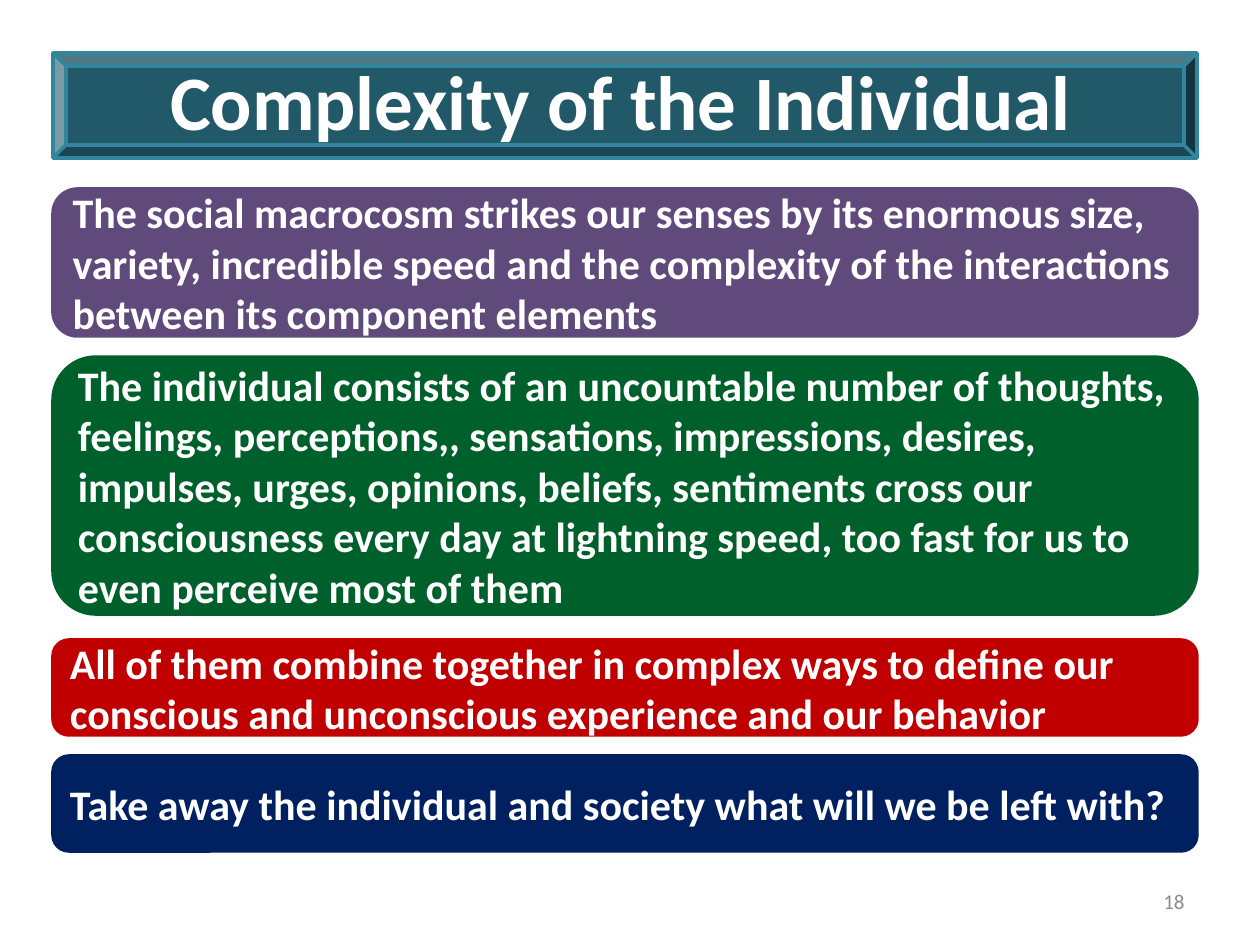
from pptx import Presentation
from pptx.dml.color import RGBColor
from pptx.enum.shapes import MSO_SHAPE as Shape
from pptx.enum.text import MSO_ANCHOR as Anchor, MSO_AUTO_SIZE as AutoSize, PP_ALIGN as Align
from pptx.util import Pt

PX = 914400 // 126
LEFT, WIDTH = 53, 1144


def write(shape, text, size, color, align, bold=True):
    frame = shape.text_frame
    frame.text = text
    frame.word_wrap = True
    frame.auto_size = AutoSize.NONE
    frame.vertical_anchor = Anchor.MIDDLE
    para = frame.paragraphs[0]
    para.alignment = align
    font = para.runs[0].font
    font.name, font.size, font.bold = "Calibri", Pt(size), bold
    font.color.rgb = RGBColor.from_string(color)


def add_panel(kind, top, height, fill, line):
    panel = page.shapes.add_shape(kind, LEFT * PX, top * PX, WIDTH * PX, height * PX)
    panel.shadow.inherit = False
    panel.fill.solid()
    panel.fill.fore_color.rgb = RGBColor.from_string(fill)
    panel.line.color.rgb = RGBColor.from_string(line)
    panel.line.width = Pt(2)
    return panel


deck = Presentation()
deck.slide_width, deck.slide_height = 1260 * PX, 945 * PX
page = deck.slides.add_slide(deck.slide_layouts[5])

# Title on its bevelled banner
title = page.shapes.title
title.left, title.top, title.width, title.height = 63 * PX, 21 * PX, 1134 * PX, 158 * PX
write(title, "Complexity of the Individual ", 44, "FFFFFF", Align.CENTER)
banner = add_panel(Shape.BEVEL, 53, 105, "215968", "31859C")
title._element.addprevious(banner._element)

# Statements: top, height, color, text
statements = [
    (189, 147, "604A7B",
     "The social macrocosm strikes our senses by its enormous size, variety, incredible speed "
     "and the complexity of the interactions between its component elements"),
    (357, 257, "00602B",
     "The individual consists of an uncountable number of thoughts, feelings, perceptions,, "
     "sensations, impressions, desires, impulses, urges, opinions, beliefs, sentiments cross our "
     "consciousness every day at lightning speed, too fast for us to even perceive most of them"),
    (640, 95, "C00000",
     "All of them combine together in complex ways to define our conscious and unconscious "
     "experience and our behavior"),
    (756, 95, "002060",
     "Take away the individual and society what will we be left with?"),
]
for top, height, color, text in statements:
    panel = add_panel(Shape.FLOWCHART_ALTERNATE_PROCESS, top, height, color, color)
    write(panel, text, 24, "FFFFFF", Align.LEFT)

page_number = page.shapes.add_textbox(903 * PX, 876 * PX, 294 * PX, 50 * PX)
write(page_number, "18", 12, "8C8C8C", Align.RIGHT, bold=False)

deck.save("out.pptx")
